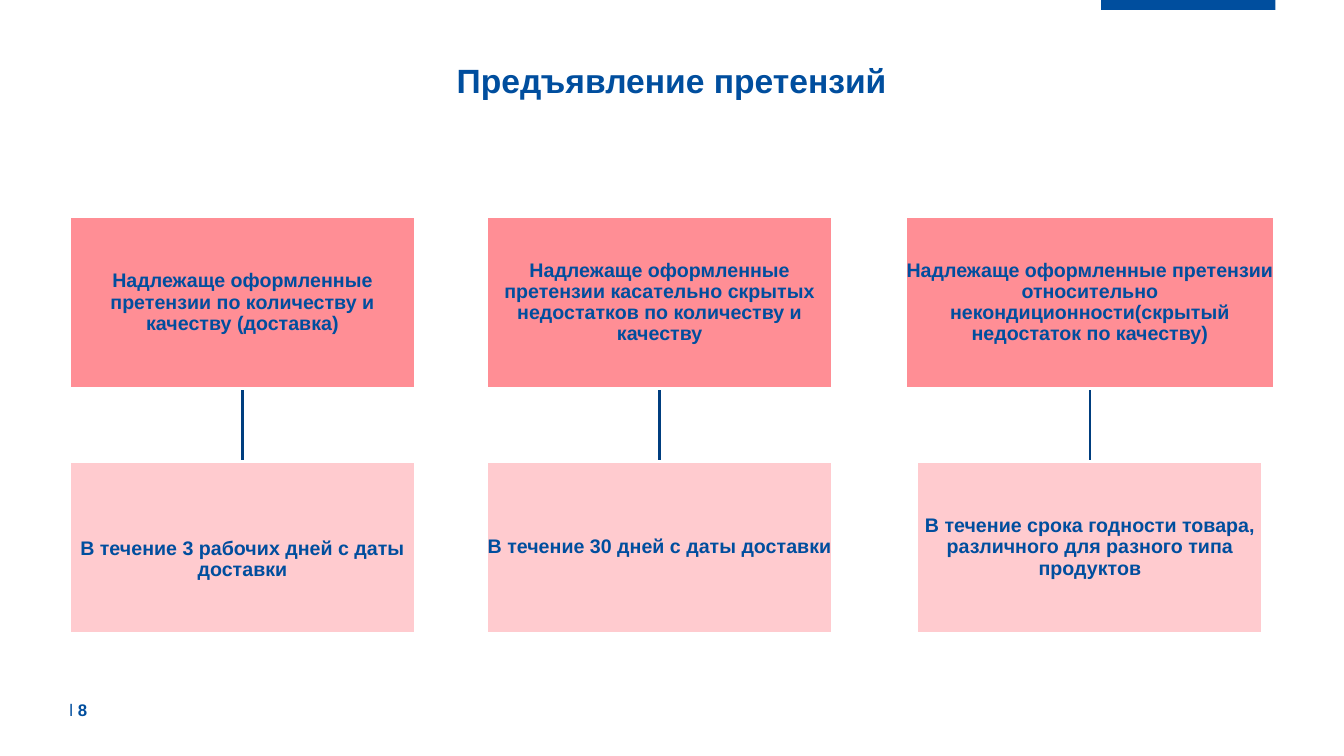
from dataclasses import dataclass

from lxml.etree import SubElement
from pptx import Presentation
from pptx.dml.color import RGBColor
from pptx.enum.shapes import MSO_CONNECTOR, MSO_SHAPE
from pptx.enum.text import MSO_ANCHOR as Anchor, PP_ALIGN as Align
from pptx.oxml.ns import qn
from pptx.util import Cm, Pt


@dataclass(frozen=True)
class Theme:
    font: str = "Arial"
    blue: str = "004E9E"
    line: str = "003E7F"
    claim: str = "FF8E95"
    term: str = "FFC6CA"
    white: str = "FFFFFF"
    title_size: int = 24
    body_size: int = 14
    number_size: int = 12
    line_width: int = 2


@dataclass(frozen=True)
class Column:
    """A kind of claim and its deadline, centred on one axis (lengths in cm)."""
    center: float
    claim: str
    term: str
    claim_width: float = 8.71
    term_inset: float = 0.02


THEME = Theme()
TERM_WIDTH, BOX_HEIGHT = 8.71, 4.34
CLAIM_TOP, TERM_TOP = 5.46, 11.63
BOX_INSET = 0.02

COLUMNS = (
    Column(6.11, "Надлежаще оформленные претензии по количеству и качеству (доставка)",
           "В течение 3 рабочих дней с даты доставки", term_inset=0.62),
    Column(16.62, "Надлежаще оформленные претензии касательно скрытых недостатков "
           "по количеству и качеству",
           "В течение 30 дней с даты доставки"),
    Column(27.46, "Надлежаще оформленные претензии относительно "
           "некондиционности(скрытый недостаток по качеству)",
           "В течение срока годности товара, различного для разного типа продуктов",
           claim_width=9.3),
)


def rgb(color: str) -> RGBColor:
    return RGBColor.from_string(color)


def add_run(p, text: str, size: int, bold: bool = True) -> None:
    r = p.add_run()
    r.text = text
    r.font.name = THEME.font
    r.font.size = Pt(size)
    r.font.bold = bold
    r.font.color.rgb = rgb(THEME.blue)


def set_frame(tf, anchor, inset: float = 0, top_inset: float | None = None) -> None:
    tf.word_wrap = True
    tf.vertical_anchor = anchor
    tf.margin_left = tf.margin_right = tf.margin_bottom = Cm(inset)
    tf.margin_top = Cm(inset if top_inset is None else top_inset)


def add_rect(s, left: float, top: float, width: float, height: float, color: str):
    sp = s.shapes.add_shape(MSO_SHAPE.RECTANGLE, Cm(left), Cm(top), Cm(width), Cm(height))
    sp.shadow.inherit = False
    sp.fill.solid()
    sp.fill.fore_color.rgb = rgb(color)
    sp.line.fill.background()
    return sp


def add_box(s, center: float, top: float, width: float, color: str, text: str,
            top_inset: float = BOX_INSET):
    sp = add_rect(s, center - width / 2, top, width, BOX_HEIGHT, color)
    sp.line.color.rgb = rgb(THEME.white)
    sp.line.width = Pt(THEME.line_width)
    set_frame(sp.text_frame, Anchor.MIDDLE, BOX_INSET, top_inset)
    p = sp.text_frame.paragraphs[0]
    p.alignment = Align.CENTER
    p.line_spacing = 0.9
    add_run(p, text, THEME.body_size)
    return sp


def set_opacity(sp, percent: int) -> None:
    color = sp._element.spPr.find(qn("a:solidFill"))[0]
    SubElement(color, qn("a:alpha")).set("val", str(percent * 1000))


def add_link(s, center: float) -> None:
    link = s.shapes.add_connector(MSO_CONNECTOR.STRAIGHT, Cm(center),
                                  Cm(CLAIM_TOP + BOX_HEIGHT), Cm(center), Cm(TERM_TOP))
    link.line.color.rgb = rgb(THEME.line)
    link.line.width = Pt(THEME.line_width)
    SubElement(link._element.spPr, qn("a:effectLst"))


def add_column(s, column: Column) -> None:
    add_link(s, column.center)
    add_box(s, column.center, CLAIM_TOP, column.claim_width, THEME.claim, column.claim)
    sp = add_box(s, column.center, TERM_TOP, TERM_WIDTH, THEME.term, column.term,
                 column.term_inset)
    set_opacity(sp, 90)


def add_title(s, text: str) -> None:
    sp = s.shapes.title
    sp.left, sp.top, sp.width, sp.height = Cm(4.32), Cm(1.52), Cm(25.2), Cm(2.77)
    set_frame(sp.text_frame, Anchor.TOP)
    p = sp.text_frame.paragraphs[0]
    p.alignment = Align.CENTER
    add_run(p, text, THEME.title_size)


def add_slide_number(s, number: str) -> None:
    sp = s.shapes.add_textbox(Cm(1.75), Cm(17.63), Cm(2.16), Cm(0.51))
    set_frame(sp.text_frame, Anchor.TOP)
    p = sp.text_frame.paragraphs[0]
    add_run(p, "l ", THEME.number_size, bold=False)
    add_run(p, number, THEME.number_size)


def main() -> None:
    prs = Presentation()
    prs.slide_width, prs.slide_height = Cm(33.86), Cm(19.05)
    s = prs.slides.add_slide(prs.slide_layouts[5])
    add_rect(s, 27.74, 0, 4.39, 0.25, THEME.blue)
    add_title(s, "Предъявление претензий")
    for column in COLUMNS:
        add_column(s, column)
    add_slide_number(s, "8")
    prs.save("out.pptx")


if __name__ == "__main__":
    main()
